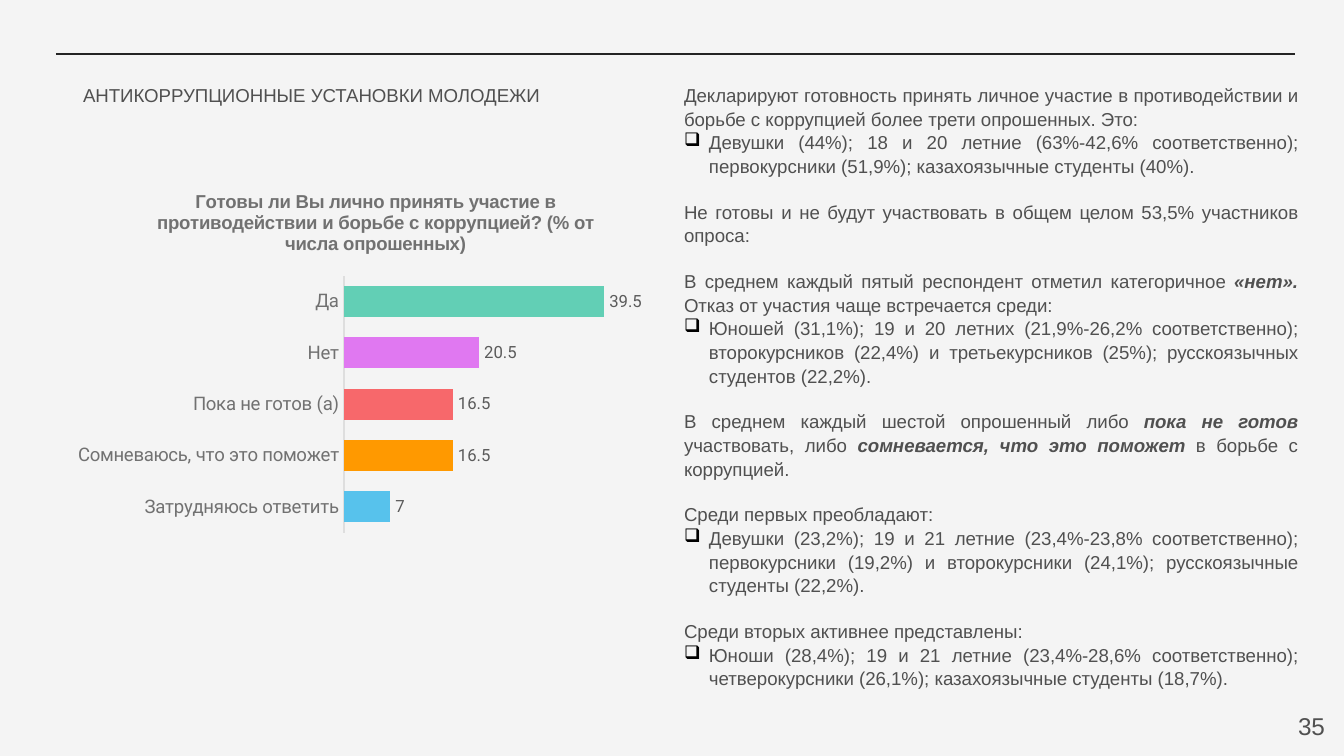
"""Build the survey slide on young people's anti-corruption attitudes."""
from lxml.etree import SubElement
from pptx import Presentation
from pptx.chart.data import CategoryChartData
from pptx.dml.color import RGBColor
from pptx.enum.chart import XL_CHART_TYPE, XL_LABEL_POSITION, XL_TICK_MARK
from pptx.enum.shapes import MSO_CONNECTOR
from pptx.enum.text import MSO_ANCHOR, MSO_AUTO_SIZE, PP_ALIGN
from pptx.oxml.ns import qn
from pptx.util import Emu, Pt

BACKGROUND = RGBColor(0xF4, 0xF4, 0xF4)
INK = RGBColor(0x24, 0x24, 0x24)
TEXT = RGBColor(0x50, 0x50, 0x50)
AXIS_TEXT = RGBColor(0x71, 0x71, 0x71)
LABEL_TEXT = RGBColor(0x5B, 0x5B, 0x5B)
AXIS_LINE = RGBColor(0xDE, 0xDE, 0xDE)
SKY = RGBColor(0x57, 0xC2, 0xEC)
ORANGE = RGBColor(0xFF, 0x99, 0x00)
CORAL = RGBColor(0xF7, 0x68, 0x6B)
VIOLET = RGBColor(0xE0, 0x78, 0xF1)
MINT = RGBColor(0x62, 0xCF, 0xB5)

HEADING = "АНТИКОРРУПЦИОННЫЕ УСТАНОВКИ МОЛОДЕЖИ"
PAGE_NUMBER = "35"
QUESTION = ("Готовы ли Вы лично принять участие в противодействии и борьбе "
            "с коррупцией? (% от числа опрошенных)")
ANSWERS = [
    ("Затрудняюсь ответить", 7, SKY),
    ("Сомневаюсь, что это поможет", 16.5, ORANGE),
    ("Пока не готов (а)", 16.5, CORAL),
    ("Нет", 20.5, VIOLET),
    ("Да", 39.5, MINT),
]
# Each finding: lead-in spans (odd ones emphasised), then an optional bullet.
FINDINGS = [
    (["Декларируют готовность принять личное участие в противодействии и "
      "борьбе с коррупцией более трети опрошенных. Это:"],
     "Девушки (44%); 18 и 20 летние (63%-42,6% соответственно); "
     "первокурсники (51,9%); казахоязычные студенты (40%)."),
    (["Не готовы и не будут участвовать в общем целом 53,5% участников опроса:"], None),
    (["В среднем каждый пятый респондент отметил категоричное ", "«нет». ",
      "Отказ от участия чаще встречается среди:"],
     "Юношей (31,1%); 19 и 20 летних (21,9%-26,2% соответственно); "
     "второкурсников (22,4%) и третьекурсников (25%); русскоязычных студентов (22,2%)."),
    (["В среднем каждый шестой опрошенный либо ", "пока не готов ",
      "участвовать, либо ", "сомневается, что это поможет",
      " в борьбе с коррупцией."], None),
    (["Среди первых преобладают:"],
     "Девушки (23,2%); 19 и 21 летние (23,4%-23,8% соответственно); "
     "первокурсники (19,2%) и второкурсники (24,1%); русскоязычные студенты (22,2%)."),
    (["Среди вторых активнее представлены:"],
     "Юноши (28,4%); 19 и 21 летние (23,4%-28,6% соответственно); "
     "четверокурсники (26,1%); казахоязычные студенты (18,7%)."),
]


def px(*lengths):
    return [Emu(round(length * 914400 / 134.4)) for length in lengths]


def style(font, size, color, name="Arial"):
    font.size, font.name = Pt(size), name
    font.color.rgb = color


def prepare(box):
    frame = box.text_frame
    frame.word_wrap = True
    frame.auto_size = MSO_AUTO_SIZE.NONE
    frame.vertical_anchor = MSO_ANCHOR.TOP
    (frame.margin_left, frame.margin_top,
     frame.margin_right, frame.margin_bottom) = px(13, 13, 13, 13)
    return frame


def add_bullet(para):
    properties = para._p.get_or_add_pPr()
    indent = px(25)[0]
    properties.set("marL", str(indent))
    properties.set("indent", str(-indent))
    color = SubElement(properties, qn("a:buClr"))
    SubElement(color, qn("a:srgbClr"), val="000000")
    SubElement(properties, qn("a:buChar"), char="❑")


def add_findings(page):
    frame = prepare(page.shapes.add_textbox(*px(671, 70, 640, 686)))
    rows = [(spans, False, index > 0) for index, (spans, _) in enumerate(FINDINGS)]
    bullets = [[([bullet], True, False)] if bullet else [] for _, bullet in FINDINGS]
    ordered = [row for lead, tail in zip(rows, bullets) for row in [lead, *tail]]
    for index, (spans, bulleted, spaced) in enumerate(ordered):
        para = frame.add_paragraph() if index else frame.paragraphs[0]
        if bulleted:
            add_bullet(para)
        para.alignment = PP_ALIGN.JUSTIFY
        para.line_spacing = 1.05
        para.space_before = Pt(12 if spaced else 0)
        style(para.font, 10, TEXT)
        for position, words in enumerate(spans):
            span = para.add_run()
            span.text = words
            if position % 2:
                span.font.bold = span.font.italic = True


def set_layout(parent, position, **values):
    for old in parent.findall(qn("c:layout")):
        parent.remove(old)
    layout = parent.makeelement(qn("c:layout"), {})
    parent.insert(position, layout)
    manual = SubElement(layout, qn("c:manualLayout"))
    for name, value in values.items():
        SubElement(manual, qn(f"c:{name}"), val=str(value))


def add_answers_chart(page):
    names, values, colors = zip(*ANSWERS)
    data = CategoryChartData()
    data.categories = names
    data.add_series("Series 1", values)
    chart = page.shapes.add_chart(
        XL_CHART_TYPE.BAR_CLUSTERED, *px(78, 168, 564, 442), data).chart
    style(chart.font, 10, INK)
    chart.has_legend = False
    chart.has_title = True
    title = chart.chart_title
    title.include_in_layout = False
    title.text_frame.text = QUESTION
    font = title.text_frame.paragraphs[0].font
    style(font, 10, AXIS_TEXT)
    font.bold = True
    set_layout(title._element, 1, xMode="edge", yMode="edge", x=0.13, y=0.04)
    set_layout(chart._chartSpace.chart.plotArea, 0, layoutTarget="inner",
               xMode="edge", yMode="edge", x=0.47, y=0.244, w=0.529, h=0.581)

    axis = chart.category_axis
    axis.major_tick_mark = axis.minor_tick_mark = XL_TICK_MARK.NONE
    axis.format.line.color.rgb = AXIS_LINE
    axis.format.line.width = Pt(0.75)
    style(axis.tick_labels.font, 10, AXIS_TEXT, "Roboto")
    scale = chart.value_axis
    scale.visible = scale.has_major_gridlines = False
    scale.minimum_scale, scale.maximum_scale = 0, 45

    plot = chart.plots[0]
    plot.gap_width = 66
    plot.vary_by_categories = False
    series = plot.series[0]
    series.format.fill.solid()
    series.format.fill.fore_color.rgb = MINT
    for index, color in enumerate(colors):
        fill = series.points[index].format.fill
        fill.solid()
        fill.fore_color.rgb = color
    labels = series.data_labels
    labels.show_value = True
    labels.position = XL_LABEL_POSITION.OUTSIDE_END
    style(labels.font, 9, LABEL_TEXT, "Roboto")


def main():
    deck = Presentation()
    deck.slide_width, deck.slide_height = px(1344, 756)
    page = deck.slides.add_slide(deck.slide_layouts[5])
    page.background.fill.solid()
    page.background.fill.fore_color.rgb = BACKGROUND

    rule = page.shapes.add_connector(MSO_CONNECTOR.STRAIGHT, *px(56, 54, 1295, 54))
    rule.line.color.rgb = INK
    rule.line.width = Pt(0.75)
    SubElement(rule._element.spPr, qn("a:effectLst"))

    heading = page.shapes.title
    heading.left, heading.top, heading.width, heading.height = px(70, 71, 564, 50)
    number = page.shapes.add_textbox(*px(1258, 698, 80, 58))
    for box, words, size, alignment in [
        (heading, HEADING, 10, PP_ALIGN.LEFT),
        (number, PAGE_NUMBER, 13, PP_ALIGN.RIGHT),
    ]:
        para = prepare(box).paragraphs[0]
        para.text = words
        para.alignment = alignment
        style(para.font, size, TEXT)

    add_findings(page)
    add_answers_chart(page)
    deck.save("out.pptx")


if __name__ == "__main__":
    main()
